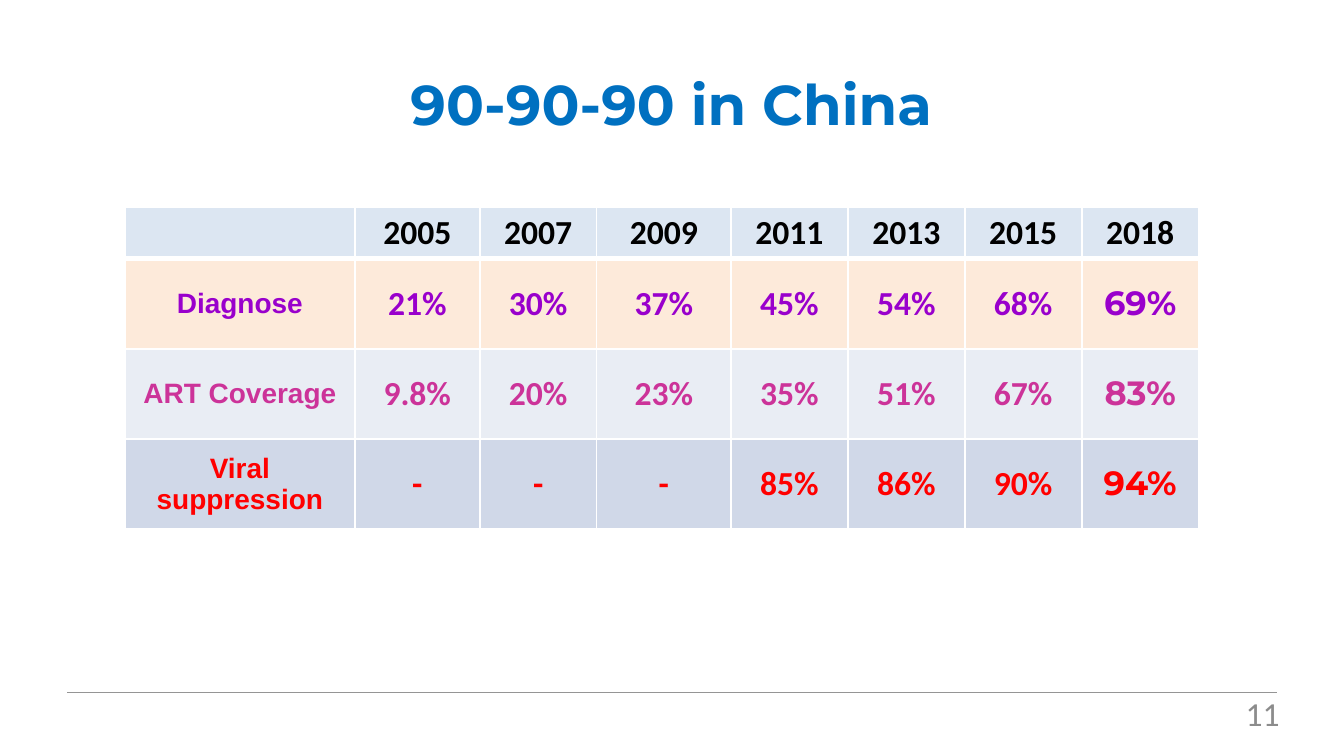
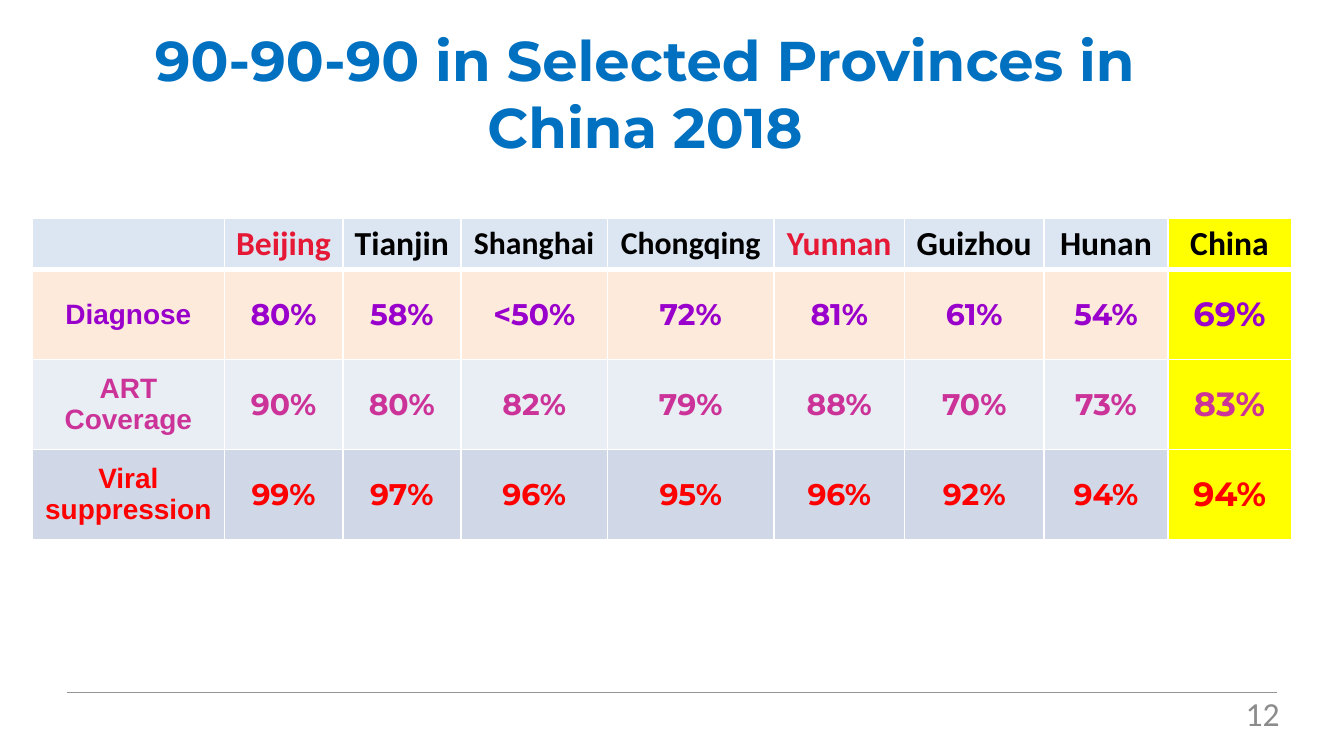
from dataclasses import dataclass

from lxml.etree import SubElement
from pptx import Presentation
from pptx.dml.color import RGBColor
from pptx.enum.shapes import MSO_CONNECTOR
from pptx.enum.text import MSO_ANCHOR as ANCHOR, PP_ALIGN as ALIGN
from pptx.oxml.ns import qn
from pptx.util import Inches, Pt

WIDTH, HEIGHT = Inches(10), Inches(5.625)

WHITE = RGBColor(0xFF, 0xFF, 0xFF)
BLACK = RGBColor(0x00, 0x00, 0x00)
BLUE = RGBColor(0x00, 0x70, 0xC0)
GREY = RGBColor(0x8C, 0x8C, 0x8C)
RULE_GREY = RGBColor(0x95, 0x95, 0x95)
CRIMSON = RGBColor(0xE5, 0x18, 0x36)
PURPLE = RGBColor(0x99, 0x00, 0xCC)
MAGENTA = RGBColor(0xCC, 0x33, 0x99)
RED = RGBColor(0xFF, 0x00, 0x00)
YELLOW = RGBColor(0xFF, 0xFF, 0x00)
HEADER_FILL = RGBColor(0xDC, 0xE6, 0xF2)
PEACH = RGBColor(0xFD, 0xEA, 0xDA)
PALE_BLUE = RGBColor(0xE9, 0xED, 0xF4)
MID_BLUE = RGBColor(0xD0, 0xD8, 0xE8)

HEADING_FONT, BODY_FONT, LABEL_FONT = "Montserrat", "Calibri", "Arial"


def px(percent: float) -> int:
    return round(WIDTH * percent / 100)


def py(percent: float) -> int:
    return round(HEIGHT * percent / 100)


@dataclass(frozen=True)
class Box:
    x: float
    y: float
    w: float
    h: float

    def emu(self) -> tuple:
        return px(self.x), py(self.y), px(self.w), py(self.h)


@dataclass(frozen=True)
class Target:
    label: str
    color: RGBColor
    fill: RGBColor


@dataclass(frozen=True)
class Column:
    head: str
    width: float
    values: tuple
    font: str = BODY_FONT
    size: int = 18
    head_size: int = 18
    head_color: RGBColor = BLACK
    highlight: bool = False


@dataclass(frozen=True)
class Page:
    number: int
    title: str
    title_box: Box
    left: float
    top: float
    label_width: float
    columns: tuple


TARGETS = (
    Target("Diagnose", PURPLE, PEACH),
    Target("ART Coverage", MAGENTA, PALE_BLUE),
    Target("Viral suppression", RED, MID_BLUE),
)
HEAD_ROW, TARGET_ROW = 4.8, 11.91
RULE_Y, RULE_LEFT, RULE_RIGHT = 91.56, 5, 95
NUMBER_BOX = Box(72.9, 90.84, 23.3, 5.33)


def province(head: str, width: float, *values: str, **options) -> Column:
    return Column(head, width, values, **{"font": HEADING_FONT, "size": 16, **options})


PAGES = (
    Page(11, "90-90-90 in China", Box(16.2, 8, 67.5, 11.38), 9.3, 27.4, 17.1, (
        Column("2005", 9.3, ("21%", "9.8%", "-")),
        Column("2007", 8.7, ("30%", "20%", "-")),
        Column("2009", 10, ("37%", "23%", "-")),
        Column("2011", 8.7, ("45%", "35%", "85%")),
        Column("2013", 8.7, ("54%", "51%", "86%")),
        Column("2015", 8.7, ("68%", "67%", "90%")),
        Column("2018", 8.7, ("69%", "83%", "94%"), font=HEADING_FONT),
    )),
    Page(12, "90-90-90 in Selected Provinces in China 2018",
         Box(7, 6.58, 82, 11.38), 2.4, 28.8, 14.3, (
             province("Beijing", 8.8, "80%", "90%", "99%", head_color=CRIMSON),
             province("Tianjin", 8.8, "58%", "80%", "97%"),
             province("Shanghai", 10.9, "<50%", "82%", "96%", head_size=17),
             province("Chongqing", 12.4, "72%", "79%", "95%", head_size=17),
             province("Yunnan", 9.7, "81%", "88%", "96%", head_color=CRIMSON),
             province("Guizhou", 10.4, "61%", "70%", "92%"),
             province("Hunan", 9.2, "54%", "73%", "94%"),
             province("China", 9.2, "69%", "83%", "94%", size=18, highlight=True),
         )),
)


def write(tf, text: str, *, font: str = BODY_FONT, size: float = 18,
          color: RGBColor = BLACK, bold: bool = True, align=ALIGN.CENTER) -> None:
    p = tf.paragraphs[0]
    p.alignment = align
    r = p.add_run()
    r.text = text
    r.font.name, r.font.size, r.font.bold = font, Pt(size), bold
    r.font.color.rgb = color


def style_cell(cell, fill: RGBColor, bottom: float = 1) -> None:
    cell.vertical_anchor = ANCHOR.MIDDLE
    cell.margin_left = cell.margin_right = Inches(0.08)
    cell.margin_top = cell.margin_bottom = Inches(0.04)
    tc_pr = cell._tc.get_or_add_tcPr()
    for side, width in (("L", 1), ("R", 1), ("T", 1), ("B", bottom)):
        ln = SubElement(tc_pr, qn(f"a:ln{side}"), w=str(Pt(width)))
        SubElement(SubElement(ln, qn("a:solidFill")), qn("a:srgbClr"), val=str(WHITE))
    cell.fill.solid()
    cell.fill.fore_color.rgb = fill


def add_title(s, page: Page) -> None:
    sp = s.shapes.title
    sp.left, sp.top, sp.width, sp.height = page.title_box.emu()
    tf = sp.text_frame
    tf.word_wrap = True
    tf.vertical_anchor = ANCHOR.MIDDLE
    write(tf, page.title, font=HEADING_FONT, size=30, color=BLUE)


def add_footer(s, number: int) -> None:
    rule = s.shapes.add_connector(MSO_CONNECTOR.STRAIGHT, px(RULE_LEFT), py(RULE_Y),
                                  px(RULE_RIGHT), py(RULE_Y))
    rule.line.color.rgb = RULE_GREY
    rule.line.width = Pt(0.25)
    SubElement(rule._element.spPr, qn("a:effectLst"))
    tf = s.shapes.add_textbox(*NUMBER_BOX.emu()).text_frame
    tf.word_wrap = True
    write(tf, str(number), color=GREY, bold=False, align=ALIGN.RIGHT)


def add_cascade(s, page: Page) -> None:
    widths = [page.label_width] + [c.width for c in page.columns]
    heights = [HEAD_ROW] + [TARGET_ROW] * len(TARGETS)
    box = Box(page.left, page.top, sum(widths), sum(heights))
    table = s.shapes.add_table(len(heights), len(widths), *box.emu()).table
    table.first_row = table.horz_banding = False
    for col, width in zip(table.columns, widths):
        col.width = px(width)
    for row, height in zip(table.rows, heights):
        row.height = py(height)

    style_cell(table.cell(0, 0), HEADER_FILL, bottom=3)
    for i, target in enumerate(TARGETS, 1):
        cell = table.cell(i, 0)
        style_cell(cell, target.fill)
        write(cell.text_frame, target.label, font=LABEL_FONT, size=15, color=target.color)
    for j, column in enumerate(page.columns, 1):
        head = table.cell(0, j)
        style_cell(head, YELLOW if column.highlight else HEADER_FILL, bottom=3)
        write(head.text_frame, column.head, size=column.head_size, color=column.head_color)
        for i, (target, value) in enumerate(zip(TARGETS, column.values), 1):
            cell = table.cell(i, j)
            style_cell(cell, YELLOW if column.highlight else target.fill)
            write(cell.text_frame, value, font=column.font, size=column.size,
                  color=target.color)


def main() -> None:
    prs = Presentation()
    prs.slide_width, prs.slide_height = WIDTH, HEIGHT
    for page in PAGES:
        s = prs.slides.add_slide(prs.slide_layouts[5])
        add_cascade(s, page)
        add_title(s, page)
        add_footer(s, page.number)
    prs.save("out.pptx")


if __name__ == "__main__":
    main()
